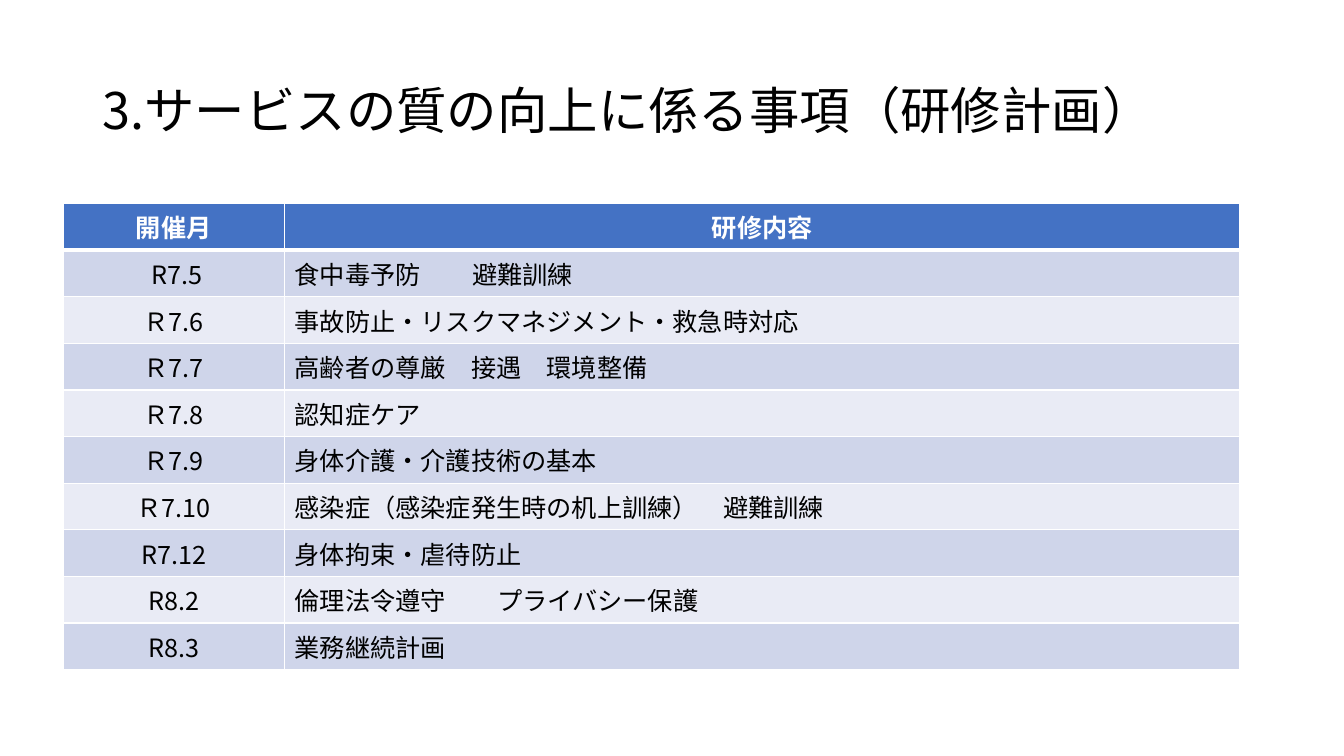
from dataclasses import dataclass

from lxml import etree
from pptx import Presentation
from pptx.dml.color import RGBColor
from pptx.enum.text import MSO_ANCHOR, MSO_AUTO_SIZE, PP_ALIGN
from pptx.oxml.ns import qn
from pptx.util import Pt

PX = 9525
FONT = "Noto Sans CJK JP"
BLACK = RGBColor(0x00, 0x00, 0x00)
WHITE = RGBColor(0xFF, 0xFF, 0xFF)
HEADER_BLUE = RGBColor(0x44, 0x72, 0xC4)
BANDS = (RGBColor(0xCF, 0xD5, 0xEA), RGBColor(0xE9, 0xEB, 0xF5))
LEFT, CENTER = PP_ALIGN.LEFT, PP_ALIGN.CENTER
MIDDLE = MSO_ANCHOR.MIDDLE
NO_AUTOFIT = MSO_AUTO_SIZE.NONE

TITLE = "3.サービスの質の向上に係る事項（研修計画）"
TITLE_BOX = {"left": 88, "top": 38, "width": 1104, "height": 139}
TABLE_LEFT, TABLE_TOP = 60, 194
COLUMN_WIDTHS = (211, 910)
ROW_HEIGHT = 44
HEADINGS = ("開催月", "研修内容")


@dataclass(frozen=True)
class Training:
    month: str
    topics: str
    tab: int = 0


TRAININGS = (
    Training(" R7.5", "食中毒予防\t避難訓練", 169),
    Training("Ｒ7.6", "事故防止・リスクマネジメント・救急時対応"),
    Training("Ｒ7.7", "高齢者の尊厳　接遇　環境整備"),
    Training("Ｒ7.8", "認知症ケア"),
    Training("Ｒ7.9", "身体介護・介護技術の基本"),
    Training("Ｒ7.10", "感染症（感染症発生時の机上訓練）　避難訓練"),
    Training("R7.12", "身体拘束・虐待防止"),
    Training("R8.2", "倫理法令遵守\tプライバシー保護", 193),
    Training("R8.3", "業務継続計画"),
)


def write(paragraph, text: str, align, size: int, color: RGBColor, bold: bool = False) -> None:
    paragraph.alignment = align
    run = paragraph.add_run()
    run.text = text
    formats = {"name": FONT, "size": Pt(size), "bold": bold}
    for attribute, value in formats.items():
        setattr(run.font, attribute, value)
    run.font.color.rgb = color
    etree.SubElement(run.font._element, qn("a:ea"), typeface=FONT)


def add_tab_stop(paragraph, position: int) -> None:
    stops = etree.SubElement(paragraph._p.get_or_add_pPr(), qn("a:tabLst"))
    etree.SubElement(stops, qn("a:tab"), pos=str(position * PX), algn="l")


def set_borders(cell, top: int = 1, bottom: int = 1) -> None:
    """Draw white borders; widths are in points. Call before filling the cell."""
    properties = cell._tc.get_or_add_tcPr()
    for side, width in {"L": 1, "R": 1, "T": top, "B": bottom}.items():
        line = etree.SubElement(properties, qn(f"a:ln{side}"), w=str(Pt(width)))
        fill = etree.SubElement(line, qn("a:solidFill"))
        etree.SubElement(fill, qn("a:srgbClr"), val=str(WHITE))


def fill_cell(cell, color: RGBColor) -> None:
    cell.fill.solid()
    cell.fill.fore_color.rgb = color


def add_title(slide) -> None:
    title = slide.shapes.title
    for attribute, length in TITLE_BOX.items():
        setattr(title, attribute, length * PX)
    frame = title.text_frame
    formats = {"word_wrap": True, "auto_size": NO_AUTOFIT, "vertical_anchor": MIDDLE}
    for attribute, value in formats.items():
        setattr(frame, attribute, value)
    heading = frame.paragraphs[0]
    heading.line_spacing = 0.9
    write(heading, TITLE, LEFT, 36, BLACK)


def add_training_table(slide) -> None:
    row_count = len(TRAININGS) + 1
    plan = slide.shapes.add_table(
        row_count, len(COLUMN_WIDTHS), TABLE_LEFT * PX, TABLE_TOP * PX,
        sum(COLUMN_WIDTHS) * PX, row_count * ROW_HEIGHT * PX,
    ).table
    for column, width in zip(plan.columns, COLUMN_WIDTHS):
        column.width = width * PX

    for index, heading in enumerate(HEADINGS):
        cell = plan.cell(0, index)
        set_borders(cell, bottom=3)
        fill_cell(cell, HEADER_BLUE)
        write(cell.text_frame.paragraphs[0], heading, CENTER, 18, WHITE, bold=True)

    for row, training in enumerate(TRAININGS, start=1):
        entries = ((training.month, CENTER), (training.topics, LEFT))
        for index, (text, align) in enumerate(entries):
            cell = plan.cell(row, index)
            set_borders(cell, top=3 if row == 1 else 1)
            fill_cell(cell, BANDS[(row - 1) % 2])
            write(cell.text_frame.paragraphs[0], text, align, 18, BLACK)
        if training.tab:
            add_tab_stop(plan.cell(row, 1).text_frame.paragraphs[0], training.tab)


def main() -> None:
    presentation = Presentation()
    presentation.slide_width = 1280 * PX
    presentation.slide_height = 720 * PX
    title_only = presentation.slide_layouts[5]
    slide = presentation.slides.add_slide(title_only)
    add_title(slide)
    add_training_table(slide)
    presentation.save("out.pptx")


if __name__ == "__main__":
    main()
